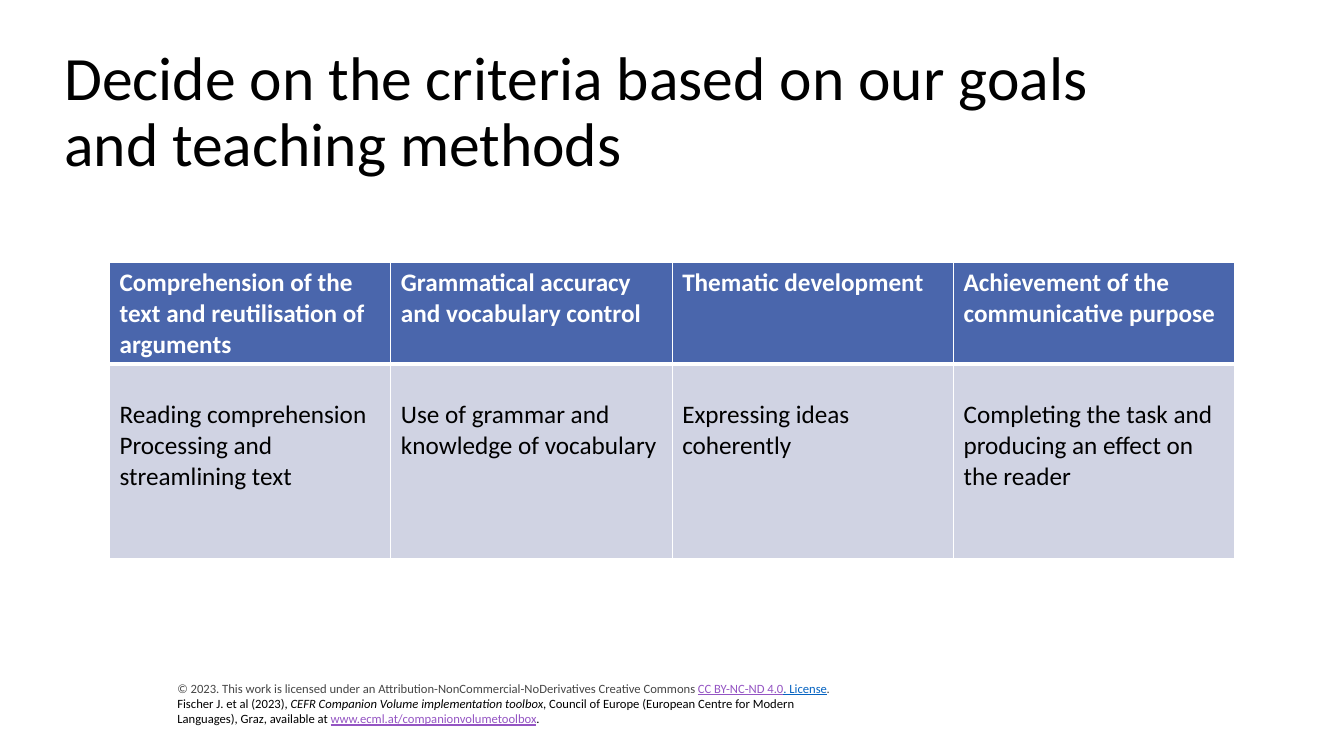
from lxml.etree import SubElement
from pptx import Presentation
from pptx.dml.color import RGBColor
from pptx.enum.text import MSO_ANCHOR
from pptx.oxml.ns import qn
from pptx.util import Cm, Pt

FONT = "Calibri"
COLORS = {
    "black": "000000",
    "white": "FFFFFF",
    "grey": "464646",
    "header": "4A66AC",
    "body": "D0D3E3",
    "visited": "9454C3",
    "link": "0563C1",
}
TITLE = "Decide on the criteria based on our goals and teaching methods"
CRITERIA = [
    ("Comprehension of the text and reutilisation of arguments",
     ["Reading comprehension", "Processing and streamlining text"]),
    ("Grammatical accuracy and vocabulary control",
     ["Use of grammar and knowledge of vocabulary"]),
    ("Thematic development", ["Expressing ideas coherently"]),
    ("Achievement of the communicative purpose",
     ["Completing the task and producing an effect on the reader"]),
]
LICENSE = [
    [
        ("© 2023. This work is licensed under an Attribution-NonCommercial-"
         "NoDerivatives Creative Commons ", "grey", ""),
        ("CC BY-NC-ND 4.0", "visited", "underline"),
        (". License", "link", "underline"),
        (".", "grey", "italic"),
    ],
    [
        ("Fischer J. et al (2023), ", "black", ""),
        ("CEFR Companion Volume implementation toolbox", "black", "italic"),
        (", Council of Europe (European Centre for Modern Languages), Graz, "
         "available at ", "black", ""),
        ("www.ecml.at/companionvolumetoolbox", "visited", "underline"),
        (".", "black", ""),
    ],
]


def rgb(name):
    """Return the named colour."""
    return RGBColor.from_string(COLORS[name])


def set_font(paragraph, size, color=None, bold=None):
    """Set the font shared by all runs of a paragraph."""
    font = paragraph.font
    font.name, font.size, font.bold = FONT, Pt(size), bold
    if color:
        font.color.rgb = rgb(color)


def add_text_frame(slide, left, top, width, height):
    """Add a wrapping, vertically centred text box and return its frame."""
    box = slide.shapes.add_textbox(Cm(left), Cm(top), Cm(width), Cm(height))
    frame = box.text_frame
    frame.word_wrap = True
    frame.vertical_anchor = MSO_ANCHOR.MIDDLE
    return frame


def add_title(slide):
    """Add the slide title."""
    paragraph = add_text_frame(slide, 1.37, 1.02, 26.95, 3.68).paragraphs[0]
    paragraph.text = TITLE
    paragraph.line_spacing = 0.9
    set_font(paragraph, 44, "black")


def add_license(slide):
    """Add the licence and citation lines."""
    frame = add_text_frame(slide, 4.22, 17.02, 17.4, 1.42)
    for index, pieces in enumerate(LICENSE):
        paragraph = frame.add_paragraph() if index else frame.paragraphs[0]
        set_font(paragraph, 9)
        for text, color, style in pieces:
            run = paragraph.add_run()
            run.text = text
            run.font.color.rgb = rgb(color)
            run.font.underline = style == "underline"
            run.font.italic = style == "italic"


def set_borders(cell, top, bottom):
    """Draw white cell borders with the given top and bottom widths."""
    properties = cell._tc.get_or_add_tcPr()
    for side, width in (("L", 1), ("R", 1), ("T", top), ("B", bottom)):
        line = SubElement(properties, qn(f"a:ln{side}"), w=str(Pt(width)))
        fill = SubElement(line, qn("a:solidFill"))
        SubElement(fill, qn("a:srgbClr"), val=COLORS["white"])


def fill_cell(cell, lines, fill, color, bold, borders):
    """Write a table cell and set its colours and borders."""
    set_borders(cell, *borders)
    cell.fill.solid()
    cell.fill.fore_color.rgb = rgb(fill)
    cell.text = "\n".join(lines)
    for paragraph in cell.text_frame.paragraphs:
        set_font(paragraph, 18, color, bold)


def add_criteria_table(slide):
    """Add the table of criteria and their meaning."""
    frame = slide.shapes.add_table(
        2, len(CRITERIA), Cm(2.76), Cm(6.62), Cm(28.36), Cm(7.45))
    table = frame.table
    table.rows[0].height, table.rows[1].height = Cm(2.55), Cm(4.9)
    for column, (heading, meaning) in enumerate(CRITERIA):
        fill_cell(table.cell(0, column), [heading], "header", "white", True, (1, 3))
        body = table.cell(1, column)
        fill_cell(body, meaning, "body", "black", False, (3, 1))
        body.margin_top = Cm(0.9)


def main():
    """Build and save the slide."""
    presentation = Presentation()
    presentation.slide_width, presentation.slide_height = Cm(33.87), Cm(19.05)
    slide = presentation.slides.add_slide(presentation.slide_layouts[6])
    add_license(slide)
    add_title(slide)
    add_criteria_table(slide)
    presentation.save("out.pptx")


if __name__ == "__main__":
    main()
